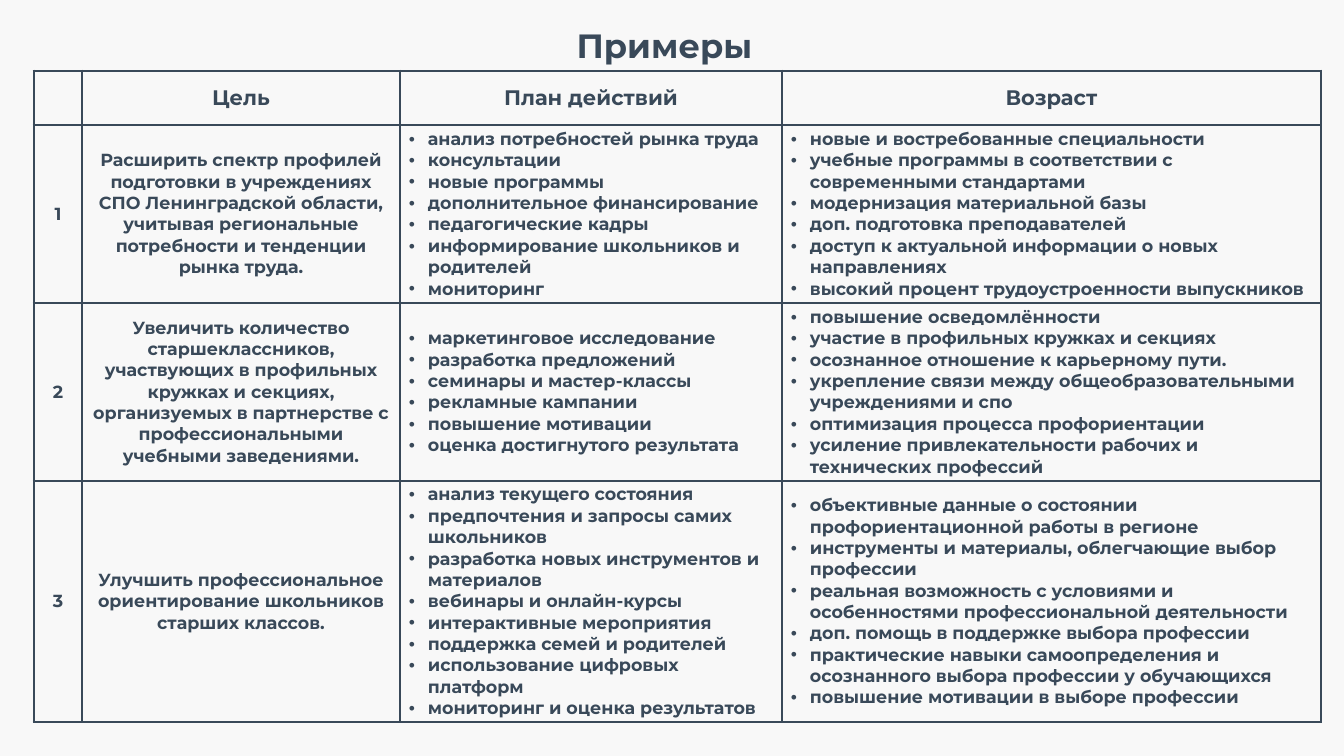
from lxml import etree
from pptx import Presentation
from pptx import util as u
from pptx.dml.color import RGBColor
from pptx.enum import text
from pptx.oxml import ns

PX = 9071.43
INK = RGBColor(0x39, 0x49, 0x59)
PAPER = RGBColor(0xF8, 0xF8, 0xF8)
FONT = "Montserrat"
COLUMNS = [48, 318, 382, 539]
ROWS = [54, 178, 178, 241]
HEADER = ["", "Цель", "План действий", "Возраст"]
GOALS = [
    (
        "Расширить спектр профилей подготовки в учреждениях СПО Ленинградской "
        "области, учитывая региональные потребности и тенденции рынка труда.",
        [
            "анализ потребностей рынка труда",
            "консультации",
            "новые программы",
            "дополнительное финансирование",
            "педагогические кадры",
            "информирование школьников и родителей",
            "мониторинг",
        ],
        [
            "новые и востребованные специальности",
            "учебные программы в соответствии с современными стандартами",
            "модернизация материальной базы",
            "доп. подготовка преподавателей",
            "доступ к актуальной информации о новых направлениях",
            "высокий процент трудоустроенности выпускников",
        ],
    ),
    (
        "Увеличить количество старшеклассников, участвующих в профильных кружках "
        "и секциях, организуемых в партнерстве с профессиональными учебными "
        "заведениями.",
        [
            "маркетинговое исследование",
            "разработка предложений",
            "семинары и мастер-классы",
            "рекламные кампании",
            "повышение мотивации",
            "оценка достигнутого результата",
        ],
        [
            "повышение осведомлённости",
            "участие в профильных кружках и секциях",
            "осознанное отношение к карьерному пути.",
            "укрепление связи между общеобразовательными учреждениями и спо",
            "оптимизация процесса профориентации",
            "усиление привлекательности рабочих и технических профессий",
        ],
    ),
    (
        "Улучшить профессиональное ориентирование школьников старших классов.",
        [
            "анализ текущего состояния",
            "предпочтения и запросы самих школьников",
            "разработка новых инструментов и материалов",
            "вебинары и онлайн-курсы",
            "интерактивные мероприятия",
            "поддержка семей и родителей",
            "использование цифровых платформ",
            "мониторинг и оценка результатов",
        ],
        [
            "объективные данные о состоянии профориентационной работы в регионе",
            "инструменты и материалы, облегчающие выбор профессии",
            "реальная возможность с условиями и особенностями профессиональной деятельности",
            "доп. помощь в поддержке выбора профессии",
            "практические навыки самоопределения и осознанного выбора профессии у обучающихся",
            "повышение мотивации в выборе профессии",
        ],
    ),
]


def px(n):
    return u.Emu(round(n * PX))


def style(p, size, align):
    p.alignment = align
    p.font.name = FONT
    p.font.size = u.Pt(size)
    p.font.bold = True
    p.font.color.rgb = INK


def add_bullet(p):
    pPr = p._p.get_or_add_pPr()
    pPr.set("marL", str(px(19)))
    pPr.set("indent", str(px(-19)))
    font = etree.Element(ns.qn("a:buFont"), typeface="Arial")
    char = etree.Element(ns.qn("a:buChar"), char="•")
    pPr.insert(0, font)
    font.addnext(char)


def add_borders(cell):
    tcPr = cell._tc.get_or_add_tcPr()
    for i, side in enumerate(("lnL", "lnR", "lnT", "lnB")):
        ln = etree.Element(ns.qn("a:" + side), w=str(u.Pt(2.25)))
        fill = etree.SubElement(ln, ns.qn("a:solidFill"))
        etree.SubElement(fill, ns.qn("a:srgbClr"), val=str(INK))
        tcPr.insert(i, ln)


def fill_cell(cell, content, size):
    cell.fill.solid()
    cell.fill.fore_color.rgb = PAPER
    add_borders(cell)
    cell.vertical_anchor = text.MSO_ANCHOR.MIDDLE
    cell.margin_left = cell.margin_right = px(9)
    cell.margin_top = cell.margin_bottom = px(3)
    bulleted = isinstance(content, list)
    tf = cell.text_frame
    tf.text = "\n".join(content) if bulleted else content
    for p in tf.paragraphs:
        style(p, size, text.PP_ALIGN.LEFT if bulleted else text.PP_ALIGN.CENTER)
        if bulleted:
            add_bullet(p)


def add_title(s, x, y, w, h):
    sp = s.shapes.title
    sp.left, sp.top, sp.width, sp.height = px(x), px(y), px(w), px(h)
    tf = sp.text_frame
    tf.text = "Примеры"
    tf.auto_size = text.MSO_AUTO_SIZE.NONE
    tf.vertical_anchor = text.MSO_ANCHOR.MIDDLE
    style(tf.paragraphs[0], 24, text.PP_ALIGN.CENTER)


def add_goals_table(s, x, y):
    frame = s.shapes.add_table(
        len(ROWS), len(COLUMNS), px(x), px(y), px(sum(COLUMNS)), px(sum(ROWS))
    )
    table = frame.table
    table.first_row = table.horz_banding = False
    for column, width in zip(table.columns, COLUMNS):
        column.width = px(width)
    for row, height in zip(table.rows, ROWS):
        row.height = px(height)
    lines = [HEADER] + [[str(n), *goal] for n, goal in enumerate(GOALS, 1)]
    for r, line in enumerate(lines):
        for c, content in enumerate(line):
            fill_cell(table.cell(r, c), content, 12.5 if r else 15)


def main():
    prs = Presentation()
    prs.slide_width, prs.slide_height = px(1344), px(756)
    s = prs.slides.add_slide(prs.slide_layouts[5])
    s.background.fill.solid()
    s.background.fill.fore_color.rgb = PAPER
    add_title(s, 12, 20, 1305, 51)
    add_goals_table(s, 34, 71)
    prs.save("out.pptx")


if __name__ == "__main__":
    main()
